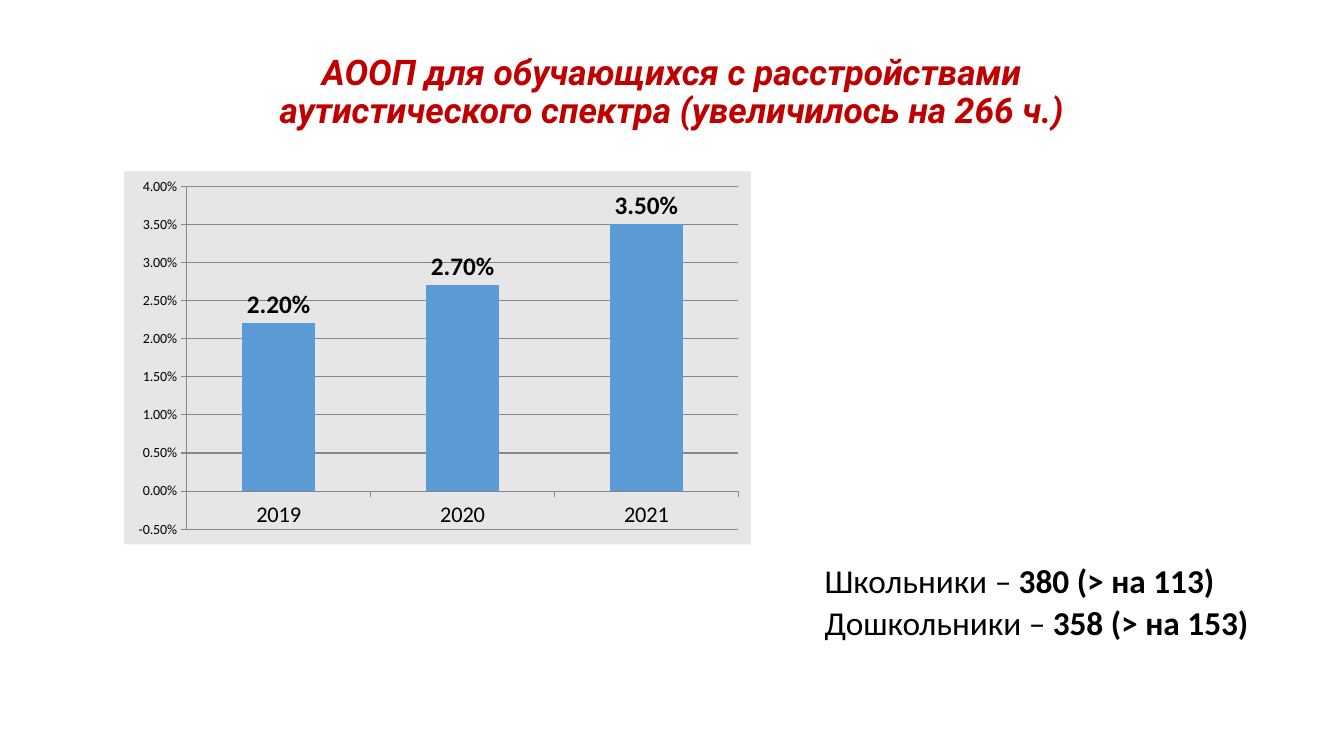
from lxml import etree
from pptx import Presentation
from pptx.chart.data import CategoryChartData
from pptx.dml.color import RGBColor
from pptx.enum.chart import XL_CHART_TYPE, XL_LABEL_POSITION, XL_TICK_MARK
from pptx.enum.text import MSO_ANCHOR, MSO_AUTO_SIZE, PP_ALIGN
from pptx.oxml import parse_xml
from pptx.oxml.ns import nsdecls, qn
from pptx.util import Pt

COLUMNS = XL_CHART_TYPE.COLUMN_CLUSTERED
OUTSIDE_END = XL_LABEL_POSITION.OUTSIDE_END
TICK_OUT = XL_TICK_MARK.OUTSIDE
MIDDLE, BOTTOM = MSO_ANCHOR.MIDDLE, MSO_ANCHOR.BOTTOM
CENTER, LEFT = PP_ALIGN.CENTER, PP_ALIGN.LEFT
NO_FIT = MSO_AUTO_SIZE.NONE

TITLE = "АООП для обучающихся с расстройствами аутистического спектра (увеличилось на 266 ч.)"
GROUPS = [("Школьники – ", "380 (> на 113)"), ("Дошкольники – ", "358 (> на 153)")]
SHARES = {"2019": 0.022, "2020": 0.027, "2021": 0.035}

COLORS = {"title": "C00000", "text": "000000", "bar": "5B9BD5",
          "panel": "E7E6E6", "line": "878787"}
BOXES = {"title": (139.7, 21.6, 680.4, 90),
         "body": (581.8, 213.1, 329, 254.9),
         "chart": (88.6, 122.4, 447.8, 266.4)}
PLOT = {"x": 0.1, "y": 0.04, "w": 0.88, "h": 0.92}
TITLE_FONT = {"name": "Roboto", "size": Pt(25.2), "bold": True, "italic": True}
BODY_FONT = {"name": "Calibri", "size": Pt(23.8)}
TITLE_FRAME = {"vertical_anchor": MIDDLE, "auto_size": NO_FIT, "word_wrap": True}
BODY_FRAME = {"vertical_anchor": BOTTOM, "auto_size": NO_FIT, "word_wrap": True,
              "margin_bottom": Pt(10)}
TITLE_PARA = {"alignment": CENTER, "line_spacing": 0.9}
BODY_PARA = {"alignment": LEFT, "line_spacing": 0.7, "space_before": Pt(10)}
VALUE_AXIS = {"minimum_scale": -0.005, "maximum_scale": 0.04, "major_unit": 0.005,
              "has_major_gridlines": True, "major_tick_mark": TICK_OUT}
LABELS = {"show_value": True, "number_format": "0.00%",
          "number_format_is_linked": False, "position": OUTSIDE_END}


def apply(target, values):
    for name, value in values.items():
        setattr(target, name, value)


def color(key):
    return RGBColor.from_string(COLORS[key])


def place(shape, key):
    sides = ("left", "top", "width", "height")
    apply(shape, dict(zip(sides, map(Pt, BOXES[key]))))


def add_span(para, text, font, color_key, **extra):
    span = para.add_run()
    span.text = text
    apply(span.font, {**font, **extra})
    span.font.color.rgb = color(color_key)


def panel_fill():
    return parse_xml(
        f'<c:spPr {nsdecls("c", "a")}><a:solidFill><a:srgbClr val="{COLORS["panel"]}"/>'
        '</a:solidFill><a:ln><a:noFill/></a:ln></c:spPr>')


def add_title(page):
    title = page.shapes.title
    place(title, "title")
    apply(title.text_frame, TITLE_FRAME)
    para = title.text_frame.paragraphs[0]
    apply(para, TITLE_PARA)
    add_span(para, TITLE, TITLE_FONT, "title")


def add_groups(page):
    body = page.placeholders[1]
    place(body, "body")
    frame = body.text_frame
    apply(frame, BODY_FRAME)
    for index, (group, count) in enumerate(GROUPS):
        para = frame.add_paragraph() if index else frame.paragraphs[0]
        apply(para, BODY_PARA)
        properties = para._p.get_or_add_pPr()
        properties.set("marL", "0")
        properties.set("indent", "0")
        etree.SubElement(properties, qn("a:buNone"))
        add_span(para, group, BODY_FONT, "text", bold=False)
        add_span(para, count, BODY_FONT, "text", bold=True)


def add_share_chart(page):
    data = CategoryChartData(number_format="0.00%")
    data.categories = list(SHARES)
    data.add_series("Series 1", list(SHARES.values()))
    chart = page.shapes.add_chart(COLUMNS, *map(Pt, BOXES["chart"]), data).chart
    apply(chart, {"has_title": False, "has_legend": False})
    apply(chart.font, {"name": "Calibri", "size": Pt(10)})
    chart.font.color.rgb = color("text")

    values, years = chart.value_axis, chart.category_axis
    apply(values, VALUE_AXIS)
    apply(values.tick_labels, {"number_format": "0.00%", "number_format_is_linked": False})
    years.major_tick_mark = TICK_OUT
    years.tick_labels.font.size = Pt(16)
    for part in (values, years, values.major_gridlines):
        part.format.line.color.rgb = color("line")
        part.format.line.width = Pt(0.75)

    plot = chart.plots[0]
    apply(plot, {"gap_width": 150, "vary_by_categories": False, "has_data_labels": True})
    apply(plot.data_labels, LABELS)
    apply(plot.data_labels.font, {"size": Pt(18), "bold": True})
    bars = plot.series[0].format.fill
    bars.solid()
    bars.fore_color.rgb = color("bar")

    space = chart._chartSpace
    area = space.chart.plotArea
    for old in area.findall(qn("c:layout")):
        area.remove(old)
    sizes = "".join(f'<c:{side} val="{share}"/>' for side, share in PLOT.items())
    area.insert(0, parse_xml(
        f'<c:layout {nsdecls("c")}><c:manualLayout><c:layoutTarget val="inner"/>'
        f'<c:xMode val="edge"/><c:yMode val="edge"/>{sizes}</c:manualLayout></c:layout>'))
    area.append(panel_fill())
    space.chart.addnext(panel_fill())


def main():
    deck = Presentation()
    deck.slide_width, deck.slide_height = Pt(960), Pt(540)
    page = deck.slides.add_slide(deck.slide_layouts[1])
    add_title(page)
    add_groups(page)
    add_share_chart(page)
    deck.save("out.pptx")


if __name__ == "__main__":
    main()
